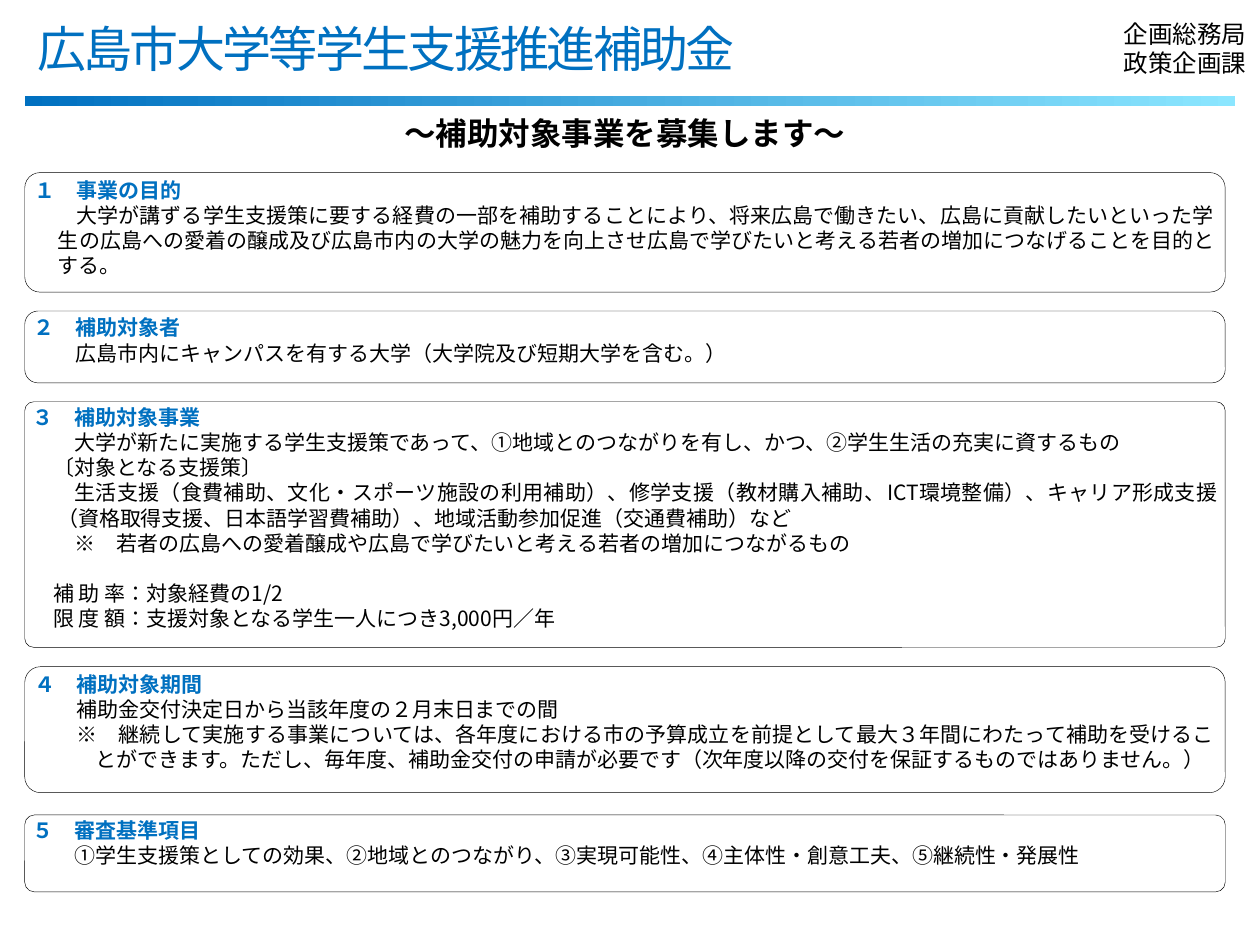
from dataclasses import dataclass

from lxml.etree import SubElement
from pptx import Presentation
from pptx.dml.color import RGBColor
from pptx.enum.lang import MSO_LANGUAGE_ID
from pptx.enum.shapes import MSO_SHAPE
from pptx.enum.text import MSO_ANCHOR, PP_ALIGN
from pptx.oxml.ns import qn
from pptx.util import Cm, Pt


@dataclass(frozen=True)
class Theme:
    blue: RGBColor = RGBColor(0x00, 0x70, 0xC0)
    sky: RGBColor = RGBColor(0x8B, 0xE6, 0xFF)
    black: RGBColor = RGBColor(0, 0, 0)
    white: RGBColor = RGBColor(255, 255, 255)
    title: int = 28
    subtitle: int = 18
    office: int = 14
    body: int = 12
    title_font: str = "Arial"
    office_font: str = "Noto Sans CJK SC"
    body_font: str = "Noto Sans CJK JP"


@dataclass(frozen=True)
class Para:
    """Body paragraph; first and rest are line starts in cm, before is in points."""
    text: str
    first: float = 0.85
    rest: float = 0
    before: float = 0


@dataclass(frozen=True)
class Section:
    top: float
    height: float
    corner: float
    heading: str
    paras: tuple[Para, ...]


T = Theme()
LEFT, WIDTH = 0.5, 24.2

SECTIONS = (
    Section(3.48, 2.41, 0.128, "１　事業の目的", (
        Para("大学が講ずる学生支援策に要する経費の一部を補助することにより、将来広島で働きたい、"
             "広島に貢献したいといった学生の広島への愛着の醸成及び広島市内の大学の魅力を向上させ"
             "広島で学びたいと考える若者の増加につなげることを目的とする。", rest=0.48),
    )),
    Section(6.27, 1.45, 0.185, "２　補助対象者", (
        Para("広島市内にキャンパスを有する大学（大学院及び短期大学を含む。）"),
    )),
    Section(8.1, 4.95, 0.036, "３　補助対象事業", (
        Para("大学が新たに実施する学生支援策であって、①地域とのつながりを有し、かつ、"
             "②学生生活の充実に資するもの"),
        Para("〔対象となる支援策〕", first=0.42),
        Para("生活支援（食費補助、文化・スポーツ施設の利用補助）、修学支援（教材購入補助、ICT環境整備）、"
             "キャリア形成支援（資格取得支援、日本語学習費補助）、地域活動参加促進（交通費補助）など",
             rest=0.5),
        Para("※　若者の広島への愛着醸成や広島で学びたいと考える若者の増加につながるもの"),
        Para("補 助 率：対象経費の1/2", first=0.42, before=14.4),
        Para("限 度 額：支援対象となる学生一人につき3,000円／年", first=0.42),
    )),
    Section(13.44, 2.54, 0.125, "４　補助対象期間", (
        Para("補助金交付決定日から当該年度の２月末日までの間"),
        Para("※　継続して実施する事業については、各年度における市の予算成立を前提として最大３年間に"
             "わたって補助を受けることができます。ただし、毎年度、補助金交付の申請が必要です"
             "（次年度以降の交付を保証するものではありません。）", rest=1.24),
    )),
    Section(16.43, 1.55, 0.125, "５　審査基準項目", (
        Para("①学生支援策としての効果、②地域とのつながり、③実現可能性、④主体性・創意工夫、"
             "⑤継続性・発展性"),
    )),
)


def style(p, size: int, font: str, color: RGBColor, bold: bool = False, spacing: float = 0) -> None:
    """Format every run, for Latin and East Asian text alike."""
    for r in p.runs:
        f = r.font
        f.size, f.name, f.bold = Pt(size), font, bold
        f.color.rgb = color
        f.language_id = MSO_LANGUAGE_ID.JAPANESE
        rPr = r._r.get_or_add_rPr()
        SubElement(rPr, qn("a:ea")).set("typeface", font)
        if spacing:
            rPr.set("spc", str(int(spacing * 100)))


def add_panel(s, top: float, height: float, corner: float, outlined: bool = True):
    sp = s.shapes.add_shape(MSO_SHAPE.ROUNDED_RECTANGLE,
                            Cm(LEFT), Cm(top), Cm(WIDTH), Cm(height))
    sp.adjustments[0] = corner
    sp.shadow.inherit = False
    sp.fill.solid()
    sp.fill.fore_color.rgb = T.white
    if outlined:
        sp.line.color.rgb = T.black
        sp.line.width = Pt(0.25)
    else:
        sp.line.fill.background()
    tf = sp.text_frame
    tf.word_wrap = True
    tf.vertical_anchor = MSO_ANCHOR.TOP
    tf.margin_left = tf.margin_right = Cm(0.1)
    tf.margin_top = tf.margin_bottom = 0
    return tf


def add_section(s, section: Section) -> None:
    tf = add_panel(s, section.top, section.height, section.corner)
    tf.text = section.heading
    p = tf.paragraphs[0]
    p.alignment = PP_ALIGN.JUSTIFY
    style(p, T.body, T.body_font, T.blue, bold=True)
    for para in section.paras:
        p = tf.add_paragraph()
        p.text = para.text
        p.alignment = PP_ALIGN.JUSTIFY
        if para.before:
            p.space_before = Pt(para.before)
        pPr = p._p.get_or_add_pPr()
        pPr.set("marL", str(Cm(para.rest)))
        pPr.set("indent", str(Cm(para.first - para.rest)))
        style(p, T.body, T.body_font, T.black)


def add_bar(s) -> None:
    sp = s.shapes.add_shape(MSO_SHAPE.RECTANGLE, Cm(LEFT), Cm(1.93), Cm(24.4), Cm(0.2))
    sp.shadow.inherit = False
    sp.line.fill.background()
    sp.fill.gradient()
    sp.fill.gradient_angle = 0
    for stop, color, position in zip(sp.fill.gradient_stops, (T.blue, T.sky), (0, 1)):
        stop.color.rgb = color
        stop.position = position


def add_label(s, left: float, top: float, width: float, height: float, text: str):
    tf = s.shapes.add_textbox(Cm(left), Cm(top), Cm(width), Cm(height)).text_frame
    tf.text = text
    return tf


def main() -> None:
    prs = Presentation()
    prs.slide_width, prs.slide_height = Cm(25.4), Cm(19.05)
    s = prs.slides.add_slide(prs.slide_layouts[6])

    add_bar(s)
    tf = add_label(s, 22.4, 0.25, 3, 1.45, "企画総務局\n政策企画課")
    tf.word_wrap = False
    for p in tf.paragraphs:
        style(p, T.office, T.office_font, T.black)

    tf = add_label(s, LEFT, 0.2, 19.63, 1.55, "広島市大学等学生支援推進補助金")
    tf.word_wrap = True
    tf.vertical_anchor = MSO_ANCHOR.MIDDLE
    style(tf.paragraphs[0], T.title, T.title_font, T.blue, spacing=-1.5)

    for section in SECTIONS:
        add_section(s, section)

    tf = add_panel(s, 2.26, 0.84, 0.185, outlined=False)
    tf.text = "～補助対象事業を募集します～"
    p = tf.paragraphs[0]
    p.alignment = PP_ALIGN.CENTER
    style(p, T.subtitle, T.body_font, T.black, bold=True)

    prs.save("out.pptx")


if __name__ == "__main__":
    main()
